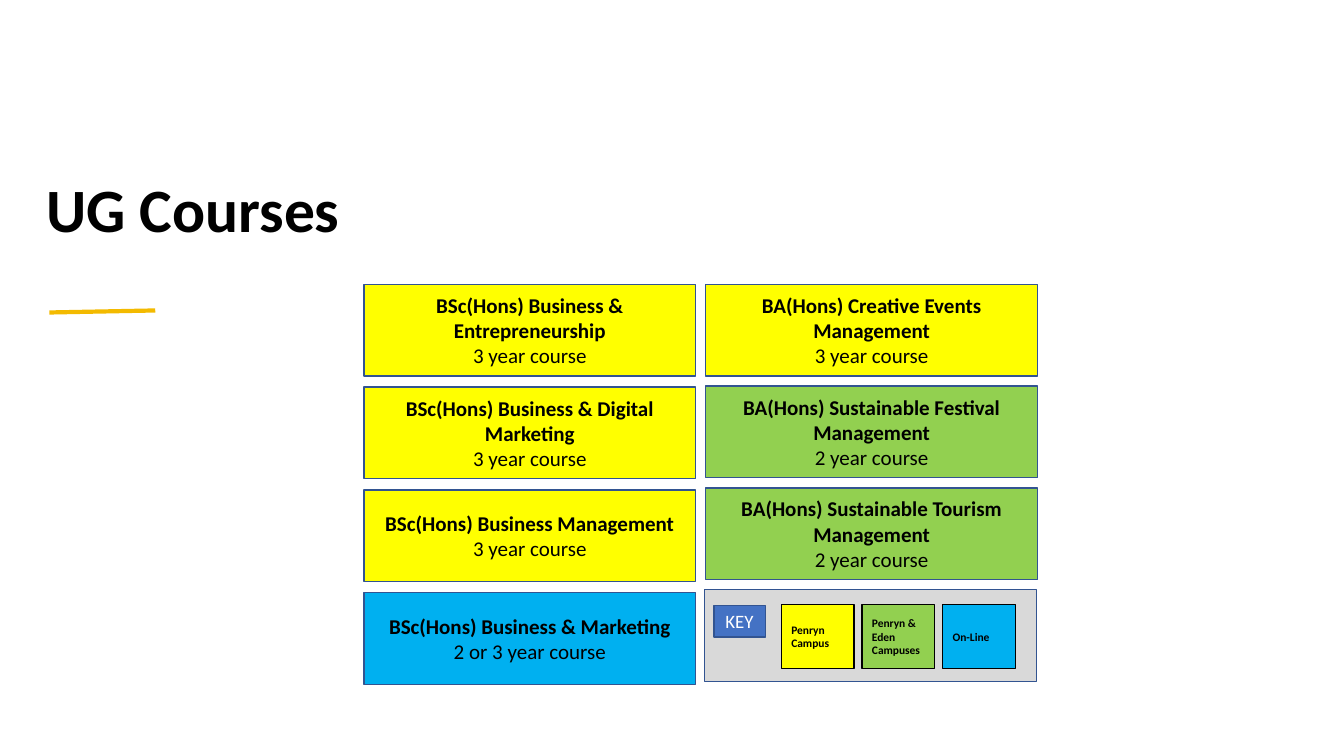
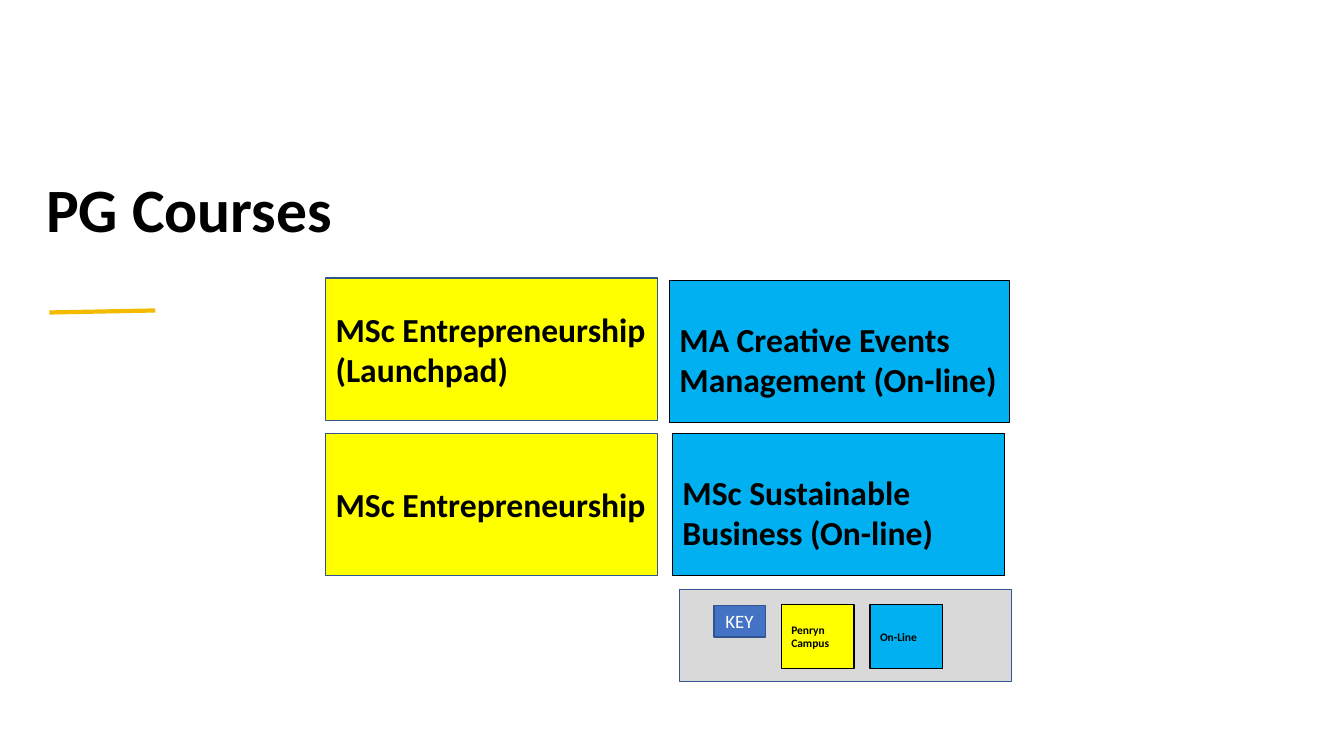
from dataclasses import dataclass

from lxml import etree
from pptx import Presentation
from pptx.dml.color import RGBColor
from pptx.enum.shapes import MSO_CONNECTOR, MSO_SHAPE
from pptx.enum.text import MSO_ANCHOR, PP_ALIGN
from pptx.oxml.ns import qn
from pptx.util import Inches, Pt

RECT = MSO_SHAPE.RECTANGLE
STRAIGHT = MSO_CONNECTOR.STRAIGHT
MIDDLE = MSO_ANCHOR.MIDDLE
LEFT, CENTER = PP_ALIGN.LEFT, PP_ALIGN.CENTER

FONT = "Calibri"
BLACK = RGBColor(0x00, 0x00, 0x00)
WHITE = RGBColor(0xFF, 0xFF, 0xFF)
GOLD = RGBColor(0xF3, 0xBA, 0x00)
NAVY = RGBColor(0x32, 0x54, 0x91)
BLUE = RGBColor(0x44, 0x72, 0xC4)
GREY = RGBColor(0xD9, 0xD9, 0xD9)
YELLOW = RGBColor(0xFF, 0xFF, 0x00)
GREEN = RGBColor(0x92, 0xD0, 0x50)
CYAN = RGBColor(0x00, 0xB0, 0xF0)


@dataclass
class Course:
    name: str
    length: str
    fill: RGBColor


@dataclass
class Programme:
    name: str
    left: float
    top: float
    width: float
    fill: RGBColor
    line: RGBColor
    inset_top: float = 0.05


@dataclass
class Swatch:
    label: str
    fill: RGBColor


@dataclass
class Column:
    left: float
    pitch: float
    courses: list[Course]


# Content
COURSE_TOP, COURSE_WIDTH, COURSE_HEIGHT = 2.82, 3.29, 0.91
UG_COLUMNS = [
    Column(3.61, 1.02, [
        Course("BSc(Hons) Business & Entrepreneurship", "3 year course", YELLOW),
        Course("BSc(Hons) Business & Digital Marketing", "3 year course", YELLOW),
        Course("BSc(Hons) Business Management", "3 year course", YELLOW),
        Course("BSc(Hons) Business & Marketing", "2 or 3 year course", CYAN),
    ]),
    Column(7.0, 1.01, [
        Course("BA(Hons) Creative Events Management", "3 year course", YELLOW),
        Course("BA(Hons) Sustainable Festival Management", "2 year course", GREEN),
        Course("BA(Hons) Sustainable Tourism Management", "2 year course", GREEN),
    ]),
]
PG_PROGRAMMES = [
    Programme("MSc Entrepreneurship (Launchpad)", 3.23, 2.76, 3.29, YELLOW, NAVY),
    Programme("MSc Entrepreneurship", 3.23, 4.3, 3.29, YELLOW, NAVY),
    Programme("MA Creative Events Management (On-line)", 6.64, 2.78, 3.37,
              CYAN, BLACK, 0.2),
    Programme("MSc Sustainable Business (On-line)", 6.67, 4.3, 3.29,
              CYAN, BLACK, 0.2),
]
PENRYN = Swatch("Penryn\nCampus", YELLOW)
EDEN = Swatch("Penryn & Eden Campuses", GREEN)
ONLINE = Swatch("On-Line", CYAN)


def write(tf, text: str, size: float, color: RGBColor = BLACK, align=LEFT,
          bold: bool = True, plain_tail: str = "", spacing: float = 1.0) -> None:
    """Write one paragraph per line, then an optional regular-weight one."""
    tf.word_wrap = True
    tf.vertical_anchor = MIDDLE
    lines = [(line, bold) for line in text.split("\n")]
    if plain_tail:
        lines.append((plain_tail, False))
    for i, (line, weight) in enumerate(lines):
        p = tf.paragraphs[0] if i == 0 else tf.add_paragraph()
        p.alignment = align
        p.line_spacing = spacing
        r = p.add_run()
        r.text = line
        r.font.name, r.font.size, r.font.bold = FONT, Pt(size), weight
        r.font.color.rgb = color


def add_box(shapes, left: float, top: float, width: float, height: float,
            fill: RGBColor, line: RGBColor = NAVY):
    sp = shapes.add_shape(RECT, Inches(left), Inches(top),
                          Inches(width), Inches(height))
    sp.shadow.inherit = False
    sp.fill.solid()
    sp.fill.fore_color.rgb = fill
    sp.line.color.rgb = line
    sp.line.width = Pt(1)
    return sp


def add_titled_slide(prs, title: str):
    s = prs.slides.add_slide(prs.slide_layouts[6])
    # Accent rule
    rule = s.shapes.add_connector(STRAIGHT, Inches(0.49), Inches(3.1),
                                  Inches(1.54), Inches(3.08))
    rule.line.color.rgb = GOLD
    rule.line.width = Pt(3)
    etree.SubElement(rule._element.spPr, qn("a:effectLst"))
    # Title
    box = s.shapes.add_textbox(Inches(0.36), Inches(1.63),
                               Inches(11.71), Inches(0.96))
    write(box.text_frame, title, 44, spacing=0.9)
    return s


def add_key(s, left: float, step: float, swatches: list[Swatch]) -> None:
    shapes = s.shapes.add_group_shape().shapes
    add_box(shapes, left, 5.85, COURSE_WIDTH, COURSE_HEIGHT, GREY)
    label = add_box(shapes, 7.08, 6.01, 0.51, 0.31, BLUE)
    write(label.text_frame, "KEY", 13.5, color=WHITE, align=CENTER, bold=False)
    for i, swatch in enumerate(swatches):
        sp = add_box(shapes, 7.75 + i * step, 6, 0.72, 0.63, swatch.fill, BLACK)
        write(sp.text_frame, swatch.label, 8.2)


def build_ug(prs) -> None:
    s = add_titled_slide(prs, "UG Courses")
    for column in UG_COLUMNS:
        for row, course in enumerate(column.courses):
            sp = add_box(s.shapes, column.left, COURSE_TOP + row * column.pitch,
                         COURSE_WIDTH, COURSE_HEIGHT, course.fill)
            write(sp.text_frame, course.name, 15, align=CENTER,
                  plain_tail=course.length)
    add_key(s, 6.99, 0.8, [PENRYN, EDEN, ONLINE])


def build_pg(prs) -> None:
    s = add_titled_slide(prs, "PG Courses")
    for prog in PG_PROGRAMMES:
        sp = add_box(s.shapes, prog.left, prog.top, prog.width, 1.41,
                     prog.fill, prog.line)
        sp.text_frame.margin_top = Inches(prog.inset_top)
        write(sp.text_frame, prog.name, 24)
    add_key(s, 6.74, 0.88, [PENRYN, ONLINE])


def main() -> None:
    prs = Presentation()
    prs.slide_width, prs.slide_height = Inches(13.33), Inches(7.5)
    build_ug(prs)
    build_pg(prs)
    prs.save("out.pptx")


if __name__ == "__main__":
    main()
